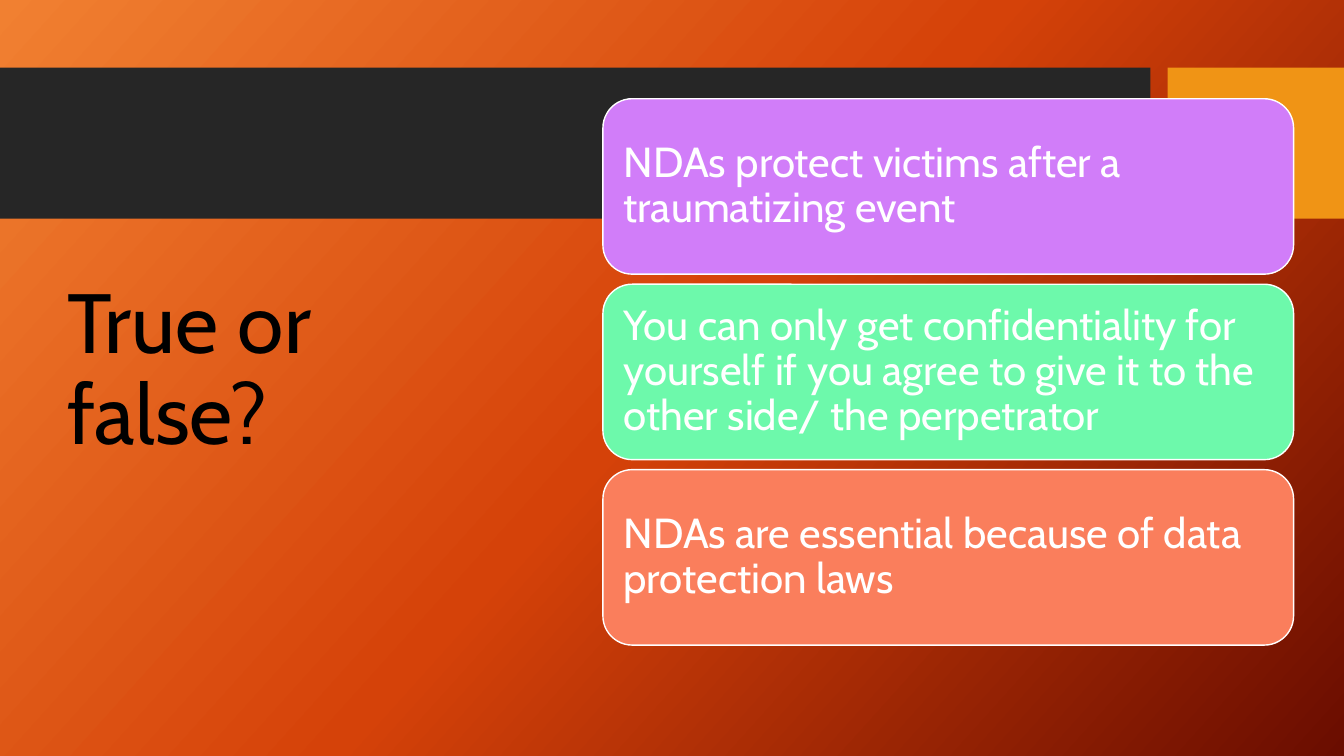
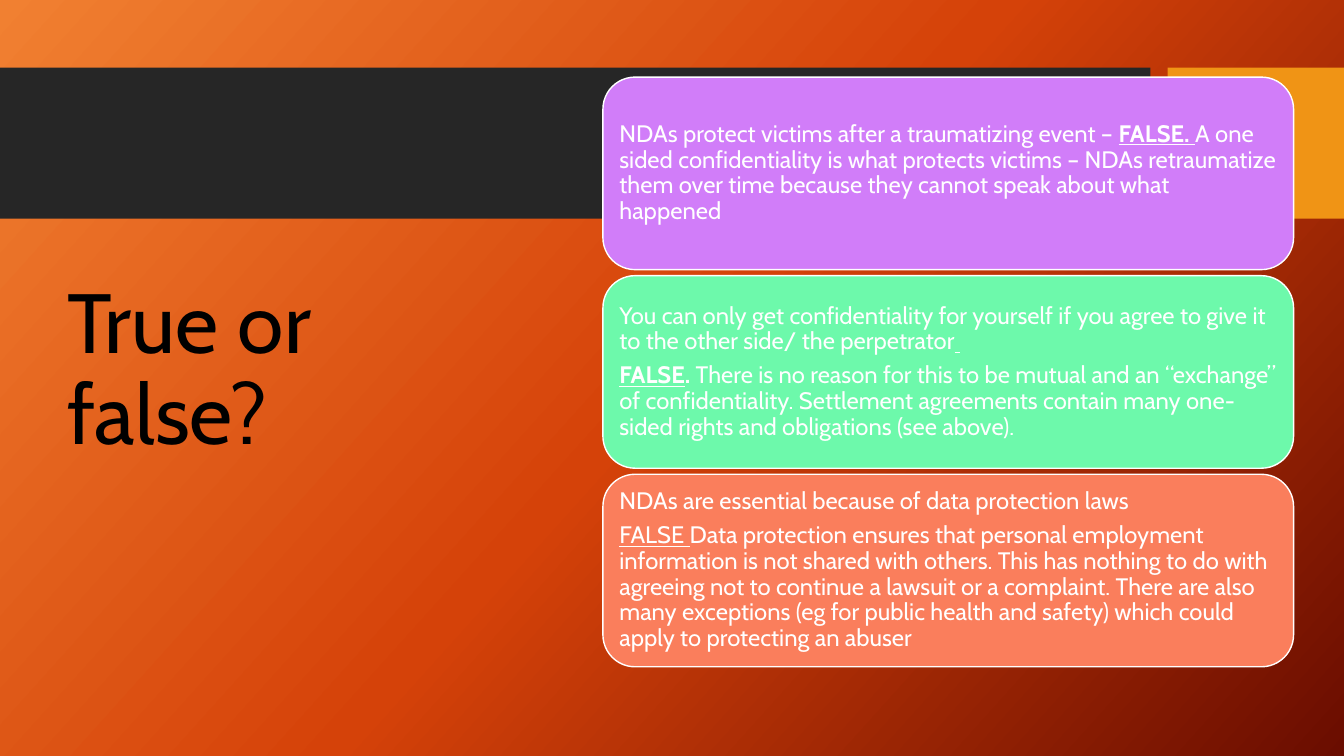
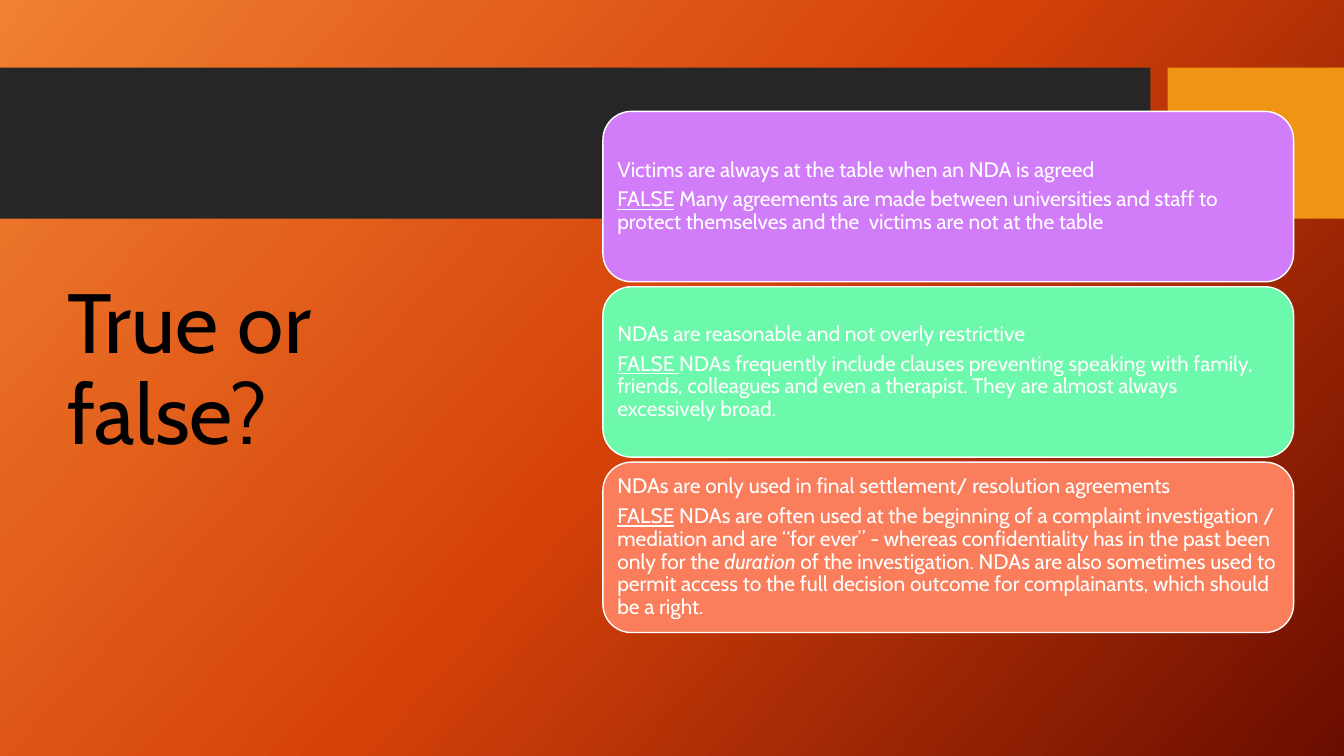
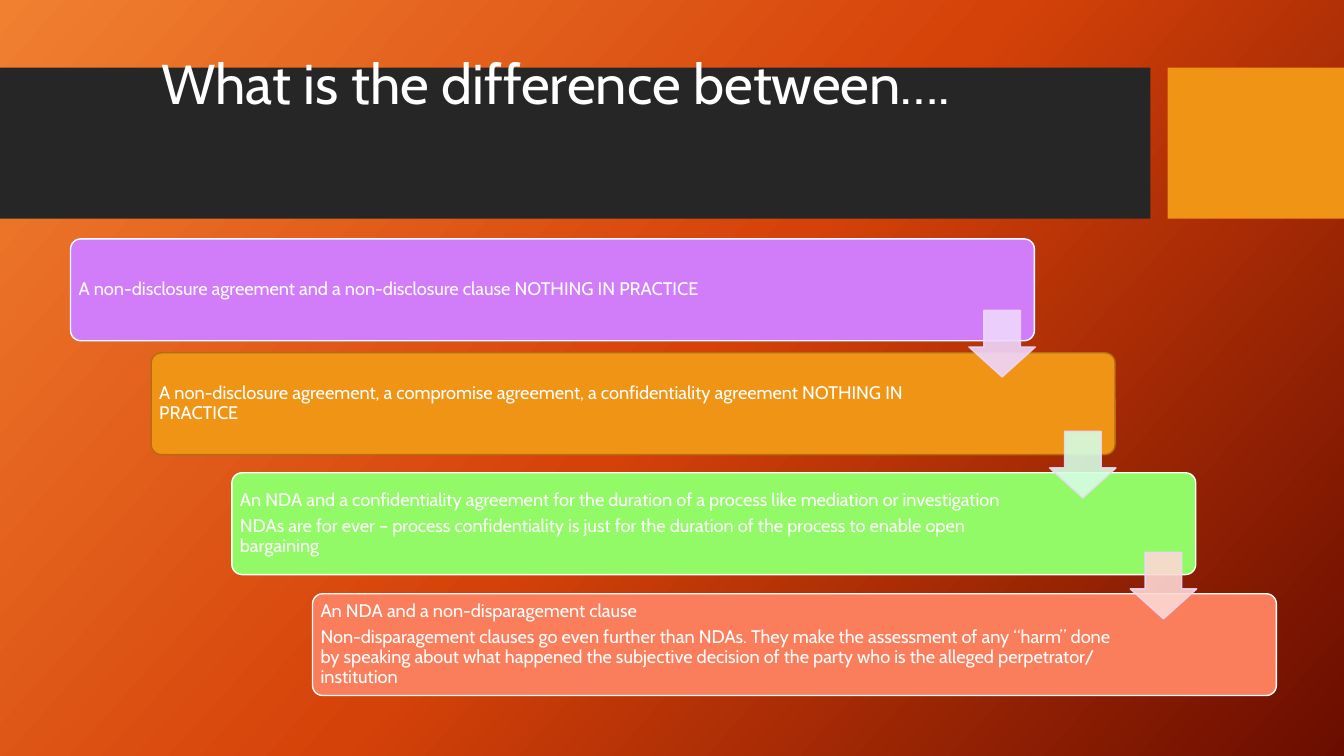
from copy import deepcopy

from lxml.etree import SubElement
from pptx import Presentation
from pptx.dml.color import RGBColor
from pptx.enum.shapes import MSO_SHAPE
from pptx.enum.text import MSO_ANCHOR, MSO_AUTO_SIZE, PP_ALIGN
from pptx.oxml.ns import qn
from pptx.util import Inches, Pt

FONT = "Cabin"
WHITE, BLACK, CHARCOAL, AMBER = "FFFFFF", "000000", "262626", "F09415"
PURPLE, MINT, LIME, CORAL = "D17DF9", "6DF9AB", "93FA67", "FA7E5C"
AMBER_EDGE, LILAC = "B26D10", "EED7FD"
BACKDROP = [(0, "F18031"), (0.5, "D54209"), (1, "6A0D00")]

CARD_LEFT, CARD_WIDTH, CARDS_MIDDLE = 5.98, 6.85, 3.69
STEP_SHIFT = 0.8

CLAIMS = [
    [[("NDAs protect victims after a traumatizing event", "")]],
    [[("You can only get confidentiality for yourself if you agree to give it "
       "to the other side/ the perpetrator", "")]],
    [[("NDAs are essential because of data protection laws", "")]],
]
ANSWERS = [
    [[("NDAs protect victims after a traumatizing event – ", ""),
      ("FALSE. ", "bu"),
      ("A one sided confidentiality is what protects victims – NDAs "
       "retraumatize them over time because they cannot speak about what "
       "happened", "")]],
    [[("You can only get confidentiality for yourself if you agree to give it "
       "to the other side/ the perpetrator", ""), (" ", "u")],
     [("FALSE", "bu"), (".", "b"),
      (" There is no reason for this to be mutual and an “exchange” of "
       "confidentiality. Settlement agreements contain many one-sided rights "
       "and obligations (see above).", "")]],
    [[("NDAs are essential because of data protection laws", "")],
     [("FALSE ", "u"),
      ("Data protection ensures that personal employment information is not "
       "shared with others. This has nothing to do with agreeing not to "
       "continue a lawsuit or a complaint. There are also many exceptions (eg "
       "for public health and safety) which could apply to protecting an "
       "abuser", "")]],
]
MORE_ANSWERS = [
    [[("Victims are always at the table when an NDA is agreed", "")],
     [("FALSE", "u"),
      (" Many agreements are made between universities and staff to protect "
       "themselves and the  victims are not at the table", "")]],
    [[("NDAs are reasonable and not overly restrictive", "")],
     [("FALSE ", "u"),
      ("NDAs frequently include clauses preventing speaking with family, "
       "friends, colleagues and even a therapist. They are almost always "
       "excessively broad.", "")]],
    [[("NDAs are only used in final settlement/ resolution agreements", "")],
     [("FALSE", "u"),
      (" NDAs are often used at the beginning of a complaint investigation / "
       "mediation and are “for ever” - whereas confidentiality has in the "
       "past been only for the ", ""),
      ("duration", "i"),
      (" of the investigation. NDAs are also sometimes used to permit access "
       "to the full decision outcome for complainants, which should be a "
       "right.", "")]],
]
DIFFERENCES = [
    (2.37, PURPLE, WHITE, 1.16,
     [[("A non-disclosure agreement and a non-disclosure clause NOTHING IN "
        "PRACTICE", "")]]),
    (3.5, AMBER, AMBER_EDGE, 1.5,
     [[("A non-disclosure agreement, a compromise agreement, a "
        "confidentiality agreement NOTHING IN PRACTICE", "")]]),
    (4.69, LIME, WHITE, 1.5,
     [[("An NDA and a confidentiality agreement for the duration of a process "
        "like mediation or investigation", "")],
      [("NDAs are for ever – process confidentiality is just for the duration "
        "of the process to enable open bargaining", "")]]),
    (5.89, CORAL, WHITE, 1.5,
     [[("An NDA and a non-disparagement clause", "")],
      [("Non-disparagement clauses go even further than NDAs. They make the "
        "assessment of any “harm” done by speaking about what happened the "
        "subjective decision of the party who is the alleged perpetrator/ "
        "institution", "")]]),
]


def rgb(value):
    return RGBColor.from_string(value)


def add_box(slide, kind, left, top, width, height, fill, edge=None):
    box = slide.shapes.add_shape(
        kind, Inches(left), Inches(top), Inches(width), Inches(height))
    box.shadow.inherit = False
    box.fill.solid()
    box.fill.fore_color.rgb = rgb(fill)
    if edge:
        box.line.color.rgb = rgb(edge)
        box.line.width = Pt(1)
    else:
        box.line.fill.background()
    return box


def write_run(paragraph, text, size, color, style=""):
    run = paragraph.add_run()
    run.text = text
    run.font.name = FONT
    run.font.size = Pt(size)
    run.font.color.rgb = rgb(color)
    for mark, attribute in (("b", "bold"), ("u", "underline"), ("i", "italic")):
        if mark in style:
            setattr(run.font, attribute, True)


def write_paragraphs(box, paragraphs, size, inset, extra_right=0):
    frame = box.text_frame
    frame.word_wrap = True
    frame.vertical_anchor = MSO_ANCHOR.MIDDLE
    frame.margin_left = frame.margin_top = frame.margin_bottom = Inches(inset)
    frame.margin_right = Inches(inset + extra_right)
    for index, runs in enumerate(paragraphs):
        paragraph = frame.add_paragraph() if index else frame.paragraphs[0]
        paragraph.alignment = PP_ALIGN.LEFT
        paragraph.line_spacing = 0.9
        paragraph.space_after = Pt(round(0.35 * size, 1))
        for text, style in runs:
            write_run(paragraph, text, size, WHITE, style)


def style_theme(prs, layout):
    master = prs.slide_master
    fill = master.background.fill
    fill.gradient()
    fill.gradient_angle = 360 - 42
    stop_list = next(master.element.iter(qn("a:gsLst")))
    stop_list.append(deepcopy(stop_list[0]))
    for stop, (position, color) in zip(fill.gradient_stops, BACKDROP):
        stop.position = position
        stop.color.rgb = rgb(color)


def move_bands_to_layout(slide, layout):
    first_placeholder = layout.placeholders[0].element
    for left, width, color in ((0, 11.41, CHARCOAL), (11.58, 1.75, AMBER)):
        band = add_box(slide, MSO_SHAPE.RECTANGLE, left, 0.67, width, 1.5, color)
        first_placeholder.addprevious(band.element)


def add_titled_slide(prs, layout, text, place, size, color):
    slide = prs.slides.add_slide(layout)
    title = slide.shapes.title
    title.left, title.top, title.width, title.height = map(Inches, place)
    frame = title.text_frame
    frame.word_wrap = True
    frame.auto_size = MSO_AUTO_SIZE.NONE
    frame.vertical_anchor = MSO_ANCHOR.MIDDLE
    paragraph = frame.paragraphs[0]
    paragraph.alignment = PP_ALIGN.LEFT
    paragraph.line_spacing = 0.9
    write_run(paragraph, text, size, color)
    return slide


def add_true_false_slide(prs, layout, cards, height, gap, size, inset):
    slide = add_titled_slide(prs, layout, "True or false?",
                             (0.57, 0.68, 4.16, 6.02), 60, BLACK)
    first_top = CARDS_MIDDLE - (3 * height + 2 * gap) / 2
    for index, (color, paragraphs) in enumerate(zip((PURPLE, MINT, CORAL), cards)):
        card = add_box(slide, MSO_SHAPE.ROUNDED_RECTANGLE, CARD_LEFT,
                       first_top + index * (height + gap), CARD_WIDTH, height,
                       color, WHITE)
        write_paragraphs(card, paragraphs, size, inset)
    return slide


def make_translucent(arrow):
    for color in arrow.element.spPr.iter(qn("a:srgbClr")):
        SubElement(color, qn("a:alpha")).set("val", "90000")


def add_differences_slide(prs, layout):
    slide = add_titled_slide(prs, layout, "What is the difference between….",
                             (1.5, 0.38, 10.98, 0.96), 40, WHITE)
    for index, (top, fill, edge, arrow_room, paragraphs) in enumerate(DIFFERENCES):
        step = add_box(slide, MSO_SHAPE.ROUNDED_RECTANGLE,
                       0.7 + index * STEP_SHIFT, top, 9.56, 1.01, fill, edge)
        step.adjustments[0] = 0.1
        write_paragraphs(step, paragraphs, 13, 0.05, arrow_room - 0.05)
    for index, fill in enumerate((LILAC, "D5FDE3", "FDD8D2")):
        arrow = add_box(slide, MSO_SHAPE.DOWN_ARROW, 9.61 + index * STEP_SHIFT,
                        3.08 + index * 1.2, 0.66, 0.66, fill, LILAC)
        arrow.adjustments[0] = 0.55
        arrow.adjustments[1] = 0.45
        make_translucent(arrow)


def main():
    prs = Presentation()
    prs.slide_width, prs.slide_height = Inches(13.33), Inches(7.5)
    layout = prs.slide_layouts.get_by_name("Title Only")
    style_theme(prs, layout)
    claims = add_true_false_slide(prs, layout, CLAIMS, 1.74, 0.1, 30, 0.12)
    move_bands_to_layout(claims, layout)
    add_true_false_slide(prs, layout, ANSWERS, 1.91, 0.06, 17, 0.07)
    add_true_false_slide(prs, layout, MORE_ANSWERS, 1.69, 0.05, 15, 0.06)
    add_differences_slide(prs, layout)
    prs.save("out.pptx")


if __name__ == "__main__":
    main()
